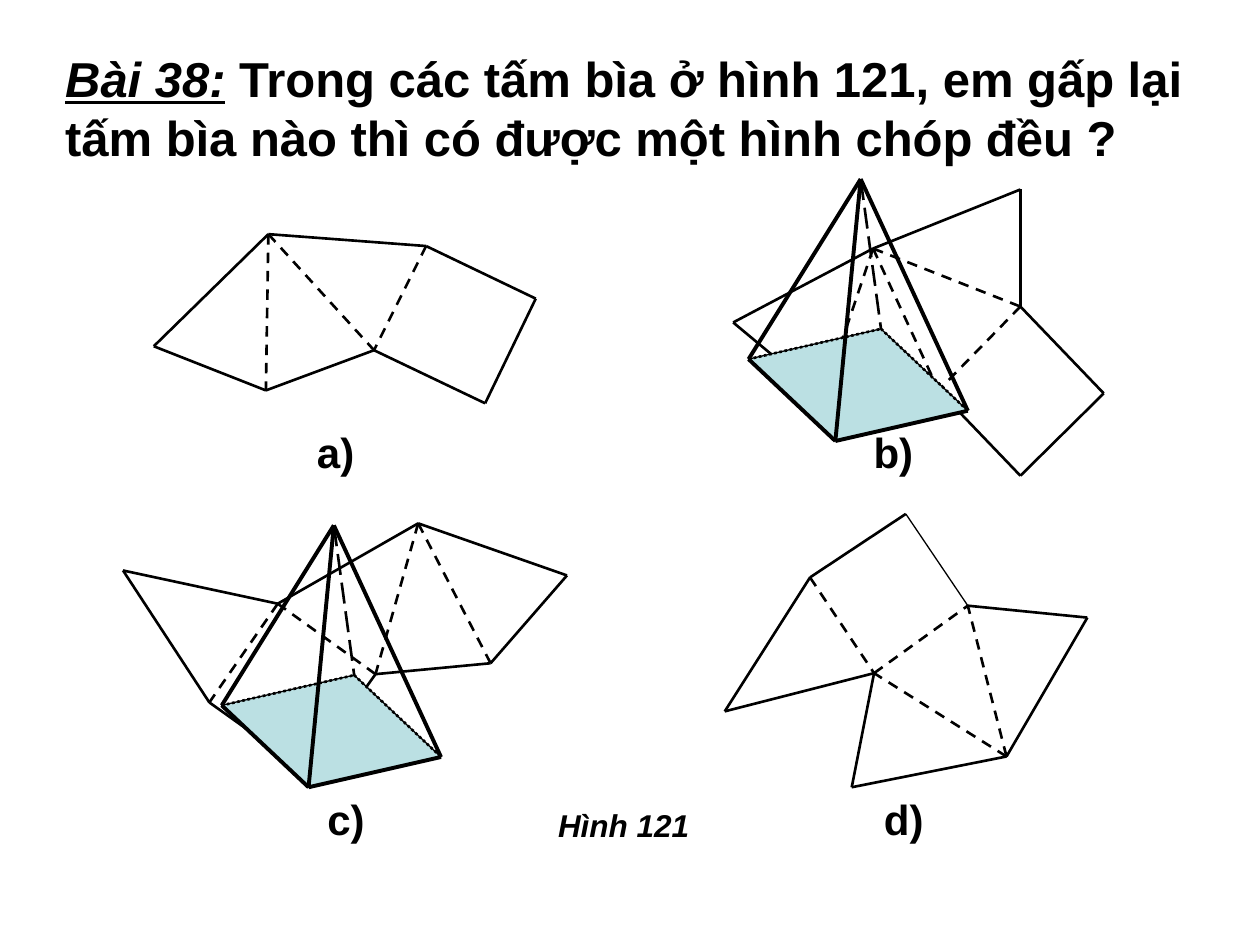
"""Build the slide for exercise 38: four foldable nets and two pyramids."""
from lxml.etree import SubElement
from pptx import Presentation
from pptx.dml.color import RGBColor
from pptx.enum.dml import MSO_LINE_DASH_STYLE as Dash
from pptx.enum.shapes import MSO_CONNECTOR as Connector
from pptx.enum.text import MSO_ANCHOR as Anchor, PP_ALIGN as Align
from pptx.oxml.ns import qn
from pptx.util import Cm, Pt

BLACK = RGBColor(0x00, 0x00, 0x00)
WHITE = RGBColor(0xFF, 0xFF, 0xFF)
PALE_TEAL = RGBColor(0xBB, 0xE0, 0xE3)

TITLE_BOX = (1.06, 0.85, 23.7, 2.61)
TITLE_RUNS = [
    ("Bài 38:", {"italic": True, "underline": True}),
    (" Trong các tấm bìa ở hình 121, em gấp lại tấm bìa nào thì có được "
     "một hình chóp đều ?", {"italic": False, "underline": False}),
]
LABELS = [
    ("a)", (6.14, 8.47, 1.7, 1.27), 24, {}),
    ("b)", (17.36, 8.47, 1.7, 1.27), 24, {}),
    ("d)", (17.57, 15.87, 1.7, 1.27), 24, {}),
    ("c)", (6.35, 15.87, 1.7, 1.27), 24, {}),
    ("Hình 121", (11.0, 16.13, 3.39, 1.02), 18, {"italic": True}),
]

STROKES = {
    "solid": (1.5, None),
    "fold": (1.5, Dash.DASH),
    "thin": (0.75, None),
    "thick": (2.25, None),
    "dotted": (1.5, Dash.ROUND_DOT),
    "hidden": (1.5, Dash.LONG_DASH),
}

NET_B = (
    {"A": (17.6, 5.01), "R": (20.57, 6.18), "C": (18.92, 7.87),
     "T": (20.57, 3.82), "S": (22.25, 7.93), "Q": (20.57, 9.59),
     "L": (16.59, 8.01), "W": (14.78, 6.5)},
    {"fold": "AC RC AR AL", "solid": "RS SQ CQ TR AT LC AW LW"},
)
NET_A = (
    {"A": (5.41, 4.72), "B": (8.59, 4.96), "C": (7.54, 7.06),
     "D": (5.36, 7.87), "E": (3.1, 6.98), "F": (10.8, 6.02),
     "G": (9.78, 8.13)},
    {"fold": "AC BC AD", "solid": "AB CD AE DE BF FG CG"},
)
NET_C = (
    {"A": (8.43, 10.55), "B": (11.43, 11.6), "C": (9.89, 13.37),
     "D": (7.57, 13.59), "E": (5.6, 12.17), "F": (6.17, 15.55),
     "G": (4.22, 14.16), "H": (2.48, 11.5)},
    {"fold": "AC AD DE EG", "solid": "BC AB CD AE DF FG HG HE"},
)
NET_D = (
    {"A": (20.29, 15.25), "B": (17.62, 13.57), "C": (17.17, 15.87),
     "D": (19.51, 12.21), "E": (21.92, 12.45), "F": (16.33, 11.64),
     "G": (18.26, 10.36), "H": (14.61, 14.34)},
    {"fold": "AB AD BD FB", "solid": "CB AC AE DE FG HB HF", "thin": "GD"},
)
NETS = [NET_B, NET_A, NET_C, NET_D]

PYRAMID_OFFSETS = {"S": (0, 0), "L": (-2.26, 3.63), "F": (-0.51, 5.28),
                   "R": (2.16, 4.67), "B": (0.41, 3.02)}
PYRAMID_EDGES = {"dotted": "LB BR", "hidden": "SB", "thick": "LF FR SF SL SR"}
PYRAMID_BASE = "LFRB"
PYRAMID_APEXES = [(6.73, 10.59), (17.35, 3.61)]


def lengths(values):
    return [Cm(value) for value in values]


def style_line(line, stroke):
    width, dash = STROKES[stroke]
    line.color.rgb = BLACK
    line.width = Pt(width)
    if dash is not None:
        line.dash_style = dash


def draw_edges(group, points, edges):
    for stroke, names in edges.items():
        for start, end in names.split():
            edge = group.shapes.add_connector(
                Connector.STRAIGHT, *lengths(points[start] + points[end]))
            style_line(edge.line, stroke)
            SubElement(edge.element.spPr, qn("a:effectLst"))


def draw_pyramid(page, apex):
    points = {name: (apex[0] + across, apex[1] + down)
              for name, (across, down) in PYRAMID_OFFSETS.items()}
    group = page.shapes.add_group_shape()
    corners = [lengths(points[name]) for name in PYRAMID_BASE]
    builder = group.shapes.build_freeform(*corners[0])
    builder.add_line_segments(corners[1:], close=True)
    base = builder.convert_to_shape()
    base.shadow.inherit = False
    base.fill.solid()
    base.fill.fore_color.rgb = PALE_TEAL
    style_line(base.line, "thin")
    draw_edges(group, points, PYRAMID_EDGES)


def write_text(box, place, runs, size):
    box.left, box.top, box.width, box.height = lengths(place)
    frame = box.text_frame
    frame.word_wrap = True
    frame.vertical_anchor = Anchor.TOP
    para = frame.paragraphs[0]
    para.alignment = Align.LEFT
    para.space_before = Pt(size / 10)
    for text, extra in runs:
        span = para.add_run()
        span.text = text
        span.font.color.rgb = BLACK
        formats = {"name": "Arial", "size": Pt(size), "bold": True, **extra}
        for name, value in formats.items():
            setattr(span.font, name, value)


def main():
    deck = Presentation()
    deck.slide_width, deck.slide_height = lengths((25.4, 19.05))
    page = deck.slides.add_slide(deck.slide_layouts[5])
    page.background.fill.solid()
    page.background.fill.fore_color.rgb = WHITE
    write_text(page.shapes.title, TITLE_BOX, TITLE_RUNS, 28)
    for points, edges in NETS:
        draw_edges(page.shapes.add_group_shape(), points, edges)
    for text, place, size, extra in LABELS:
        box = page.shapes.add_textbox(*lengths(place))
        write_text(box, place, [(text, extra)], size)
    for apex in PYRAMID_APEXES:
        draw_pyramid(page, apex)
    deck.save("out.pptx")


if __name__ == "__main__":
    main()
